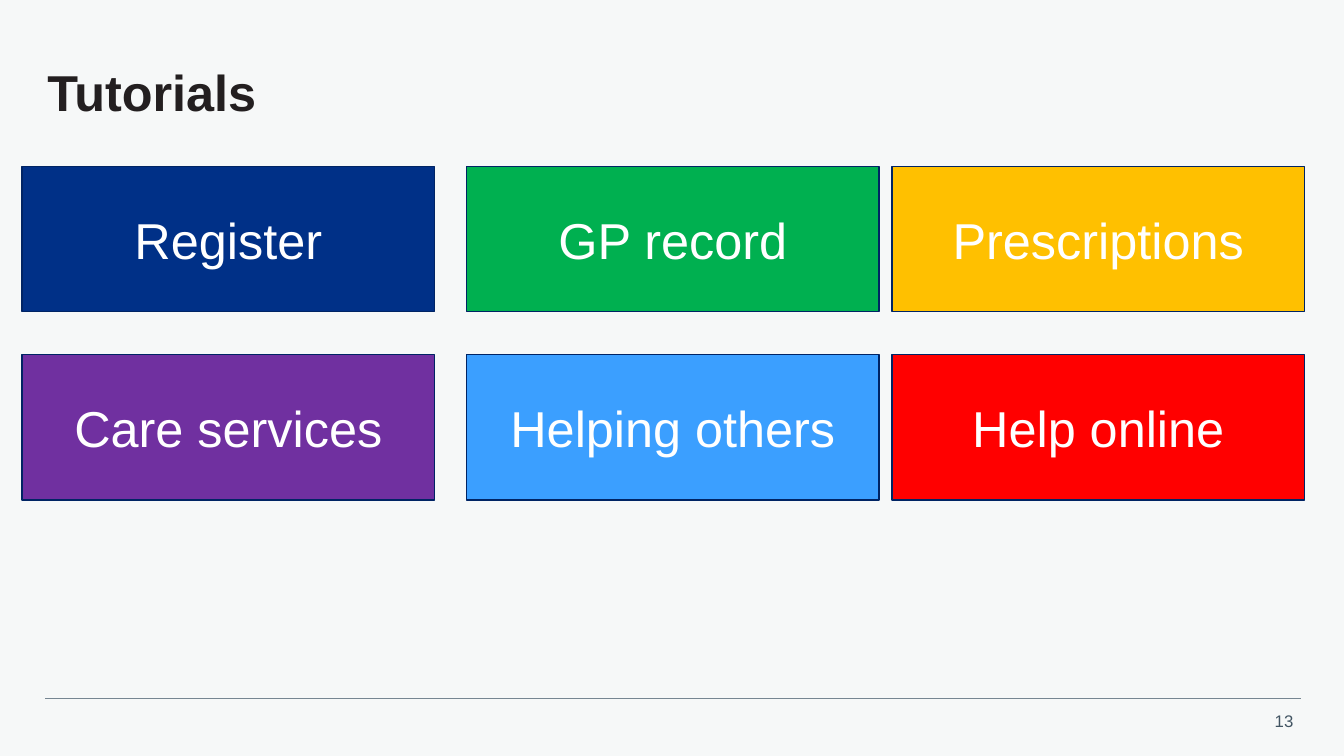
from dataclasses import dataclass

from lxml.etree import SubElement
from pptx import Presentation
from pptx.dml.color import RGBColor
from pptx.enum.shapes import MSO_CONNECTOR, MSO_SHAPE
from pptx.enum.text import MSO_ANCHOR as Anchor, PP_ALIGN as Align
from pptx.oxml.ns import qn
from pptx.shapes.base import BaseShape
from pptx.slide import Slide
from pptx.util import Pt

PAPER = RGBColor(0xF6, 0xF8, 0xF8)
INK = RGBColor(0x23, 0x1F, 0x20)
WHITE = RGBColor(0xFF, 0xFF, 0xFF)
SLATE = RGBColor(0x42, 0x55, 0x63)
RULE_GREY = RGBColor(0x76, 0x86, 0x92)
OUTLINE = RGBColor(0x00, 0x24, 0x64)
NAVY = RGBColor(0x00, 0x30, 0x87)
GREEN = RGBColor(0x00, 0xB0, 0x50)
AMBER = RGBColor(0xFF, 0xC0, 0x00)
PURPLE = RGBColor(0x70, 0x30, 0xA0)
SKY = RGBColor(0x3B, 0x9F, 0xFF)
RED = RGBColor(0xFF, 0x00, 0x00)

COLUMN_LEFTS = (15.84, 333.36, 637.2)
ROW_TOPS = (118.8, 253.44)
TILE_WIDTH, TILE_HEIGHT = 294.48, 103.68


@dataclass(frozen=True)
class Tutorial:
    topic: str
    fill: RGBColor


TUTORIALS = (
    Tutorial("Register", NAVY),
    Tutorial("GP record", GREEN),
    Tutorial("Prescriptions", AMBER),
    Tutorial("Care services", PURPLE),
    Tutorial("Helping others", SKY),
    Tutorial("Help online", RED),
)


def write(shape: BaseShape, text: str, *, size: float, color: RGBColor,
          align: Align = Align.LEFT, anchor: Anchor = Anchor.MIDDLE,
          bold: bool = False, wrap: bool = True,
          line_spacing: float = 1.0) -> None:
    frame = shape.text_frame
    frame.word_wrap = wrap
    frame.vertical_anchor = anchor
    paragraph = frame.paragraphs[0]
    paragraph.alignment = align
    paragraph.line_spacing = line_spacing
    run = paragraph.add_run()
    run.text = text
    run.font.name = "Arial"
    run.font.size = Pt(size)
    run.font.bold = bold
    run.font.color.rgb = color


def add_tile(slide: Slide, tutorial: Tutorial, left: float, top: float) -> None:
    tile = slide.shapes.add_shape(MSO_SHAPE.RECTANGLE, Pt(left), Pt(top),
                                  Pt(TILE_WIDTH), Pt(TILE_HEIGHT))
    tile.shadow.inherit = False
    tile.fill.solid()
    tile.fill.fore_color.rgb = tutorial.fill
    tile.line.color.rgb = OUTLINE
    tile.line.width = Pt(1)
    write(tile, tutorial.topic, size=36, color=WHITE, align=Align.CENTER)


def add_title(slide: Slide) -> None:
    title = slide.shapes.add_textbox(Pt(33.84), Pt(33.84), Pt(897.84), Pt(68.4))
    frame = title.text_frame
    frame.margin_left = frame.margin_top = Pt(0)
    frame.margin_right = frame.margin_bottom = Pt(0)
    write(title, "Tutorials", size=36, color=INK, bold=True, line_spacing=0.9)


def add_footer(slide: Slide) -> None:
    rule = slide.shapes.add_connector(MSO_CONNECTOR.STRAIGHT, Pt(32.4), Pt(498.96),
                                      Pt(929.52), Pt(498.96))
    rule.line.color.rgb = RULE_GREY
    rule.line.width = Pt(0.5)
    SubElement(rule._element.spPr, qn("a:effectLst"))
    page_number = slide.shapes.add_textbox(Pt(901.44), Pt(504), Pt(29.52), Pt(21.6))
    write(page_number, "13", size=12, color=SLATE, align=Align.RIGHT,
          anchor=Anchor.TOP, wrap=False)


def main() -> None:
    deck = Presentation()
    deck.slide_width, deck.slide_height = Pt(960), Pt(540)
    slide = deck.slides.add_slide(deck.slide_layouts[6])
    slide.background.fill.solid()
    slide.background.fill.fore_color.rgb = PAPER

    add_footer(slide)
    add_title(slide)

    # Tutorial tiles, filled row by row
    for index, tutorial in enumerate(TUTORIALS):
        row, column = divmod(index, len(COLUMN_LEFTS))
        add_tile(slide, tutorial, COLUMN_LEFTS[column], ROW_TOPS[row])

    deck.save("out.pptx")


if __name__ == "__main__":
    main()
